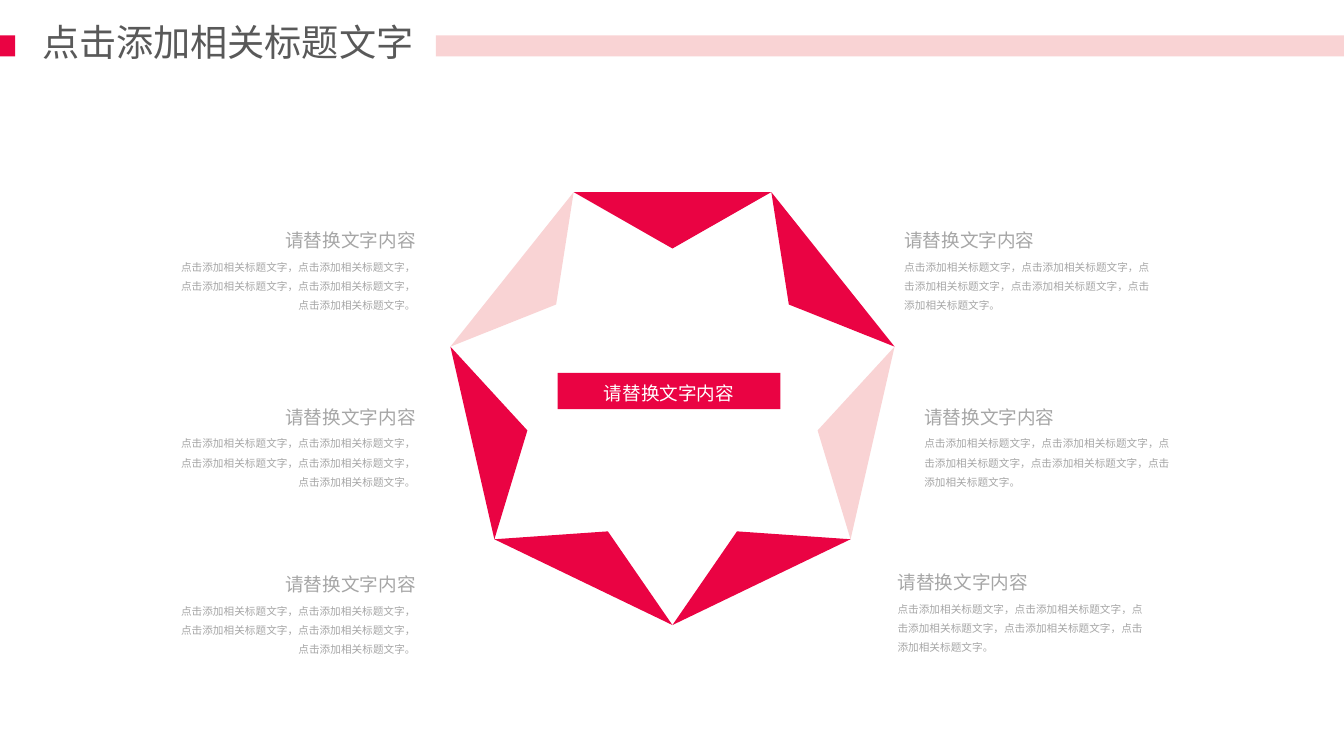
from dataclasses import dataclass
from math import cos, pi, sin

from pptx import Presentation
from pptx.dml.color import RGBColor
from pptx.enum.shapes import MSO_SHAPE as Shape
from pptx.enum.text import MSO_ANCHOR as Anchor, MSO_AUTO_SIZE as AutoSize, PP_ALIGN as Align
from pptx.oxml.ns import qn
from pptx.util import Inches, Pt


@dataclass(frozen=True)
class Theme:
    red: str = "EA0343"
    pink: str = "F9D3D4"
    white: str = "FFFFFF"
    title_grey: str = "595959"
    text_grey: str = "A6A6A6"
    heading_font: str = "Arial"
    body_font: str = "Noto Sans CJK SC"
    title_size: int = 28
    heading_size: int = 14
    body_size: int = 8


@dataclass(frozen=True)
class Box:
    left: float
    top: float
    width: float
    height: float

    def emu(self):
        return [Inches(side) for side in (self.left, self.top, self.width, self.height)]


THEME = Theme()
TITLE = "点击添加相关标题文字"
HEADING = "请替换文字内容"
BODY = "，".join([TITLE] * 5) + "。"
SIDES = 7
PINK_SIDES = (2, 6)


def apply(target, values):
    for name, value in values.items():
        setattr(target, name, value)


def paint(shape, color):
    shape.fill.solid()
    shape.fill.fore_color.rgb = RGBColor.from_string(color)
    shape.line.fill.background()
    shape.shadow.inherit = False


def add_bar(page, box, color):
    bar = page.shapes.add_shape(Shape.RECTANGLE, *box.emu())
    paint(bar, color)
    return bar


def write(frame, text, font, size, color, frame_format, para_format):
    apply(frame, frame_format)
    para = frame.paragraphs[0]
    apply(para, para_format)
    span = para.add_run()
    span.text = text
    apply(span.font, {"name": font, "size": Pt(size)})
    span.font.color.rgb = RGBColor.from_string(color)
    # East Asian typeface
    east_asian = span.font._element.makeelement(qn("a:ea"), {"typeface": THEME.body_font})
    span.font._element.append(east_asian)


def add_header(page, box):
    # Red tab and pink band on either side of the title
    bar_top, bar_height, band_left = box.top + 0.37, 0.22, box.left + 4.56
    add_bar(page, Box(band_left, bar_top, box.width - 4.56, bar_height), THEME.pink)
    add_bar(page, Box(box.left, bar_top, 0.16, bar_height), THEME.red)

    title = page.shapes.title
    place = Box(box.left + 0.34, box.top + 0.18, 4.13, 0.57).emu()
    apply(title, dict(zip(("left", "top", "width", "height"), place)))
    write(title.text_frame, TITLE, THEME.body_font, THEME.title_size, THEME.title_grey,
          {"word_wrap": False, "auto_size": AutoSize.SHAPE_TO_FIT_TEXT,
           "vertical_anchor": Anchor.MIDDLE},
          {"alignment": Align.LEFT, "line_spacing": 0.9})


def add_star_ring(page, box):
    # Each side of a heptagon carries a triangle pointing to the centre
    radius = box.height / (1 + cos(pi / SIDES))
    tip_radius = radius * cos(pi / SIDES) - 0.59
    center_x = box.left + box.width / 2
    center_y = box.top + box.height - radius

    def point(distance, angle):
        return (Inches(center_x + distance * sin(angle)),
                Inches(center_y - distance * cos(angle)))

    for side in range(SIDES):
        angle = 2 * pi * side / SIDES
        start = point(radius, angle - pi / SIDES)
        end = point(radius, angle + pi / SIDES)
        outline = page.shapes.build_freeform(*start)
        outline.add_line_segments([end, point(tip_radius, angle)])
        paint(outline.convert_to_shape(), THEME.pink if side in PINK_SIDES else THEME.red)

    # Central label
    label = add_bar(page, Box(center_x - 1.2, box.top + 1.89, 2.33, 0.38), THEME.red)
    write(label.text_frame, HEADING, THEME.heading_font, THEME.heading_size, THEME.white,
          {"word_wrap": True, "vertical_anchor": Anchor.MIDDLE},
          {"alignment": Align.CENTER, "line_spacing": 1.2, "space_before": Pt(2.8)})


def add_caption(page, box, align):
    heading_box = Box(box.left, box.top, box.width, 0.39)
    body_box = Box(box.left, box.top + 0.31, box.width, box.height - 0.31)
    for part, text, font, size, spacing in (
        (heading_box, HEADING, THEME.heading_font, THEME.heading_size, 1.2),
        (body_box, BODY, THEME.body_font, THEME.body_size, 1.5),
    ):
        frame = page.shapes.add_textbox(*part.emu()).text_frame
        write(frame, text, font, size, THEME.text_grey,
              {"word_wrap": True, "auto_size": AutoSize.SHAPE_TO_FIT_TEXT,
               "margin_left": Inches(0.11), "margin_right": Inches(0.11)},
              {"alignment": align, "line_spacing": spacing})


def build_ring_slide(deck, box):
    page = deck.slides.add_slide(deck.slide_layouts[5])
    add_header(page, box)
    add_star_ring(page, Box(4.71, 2.01, 4.65, 4.53))
    # Captions on both sides follow the ring from top to bottom
    for top in (2.3, 4.15, 5.9):
        add_caption(page, Box(1.68, top, 2.78, 1.02), Align.RIGHT)
    for left, top in ((9.35, 2.3), (9.56, 4.15), (9.28, 5.88)):
        add_caption(page, Box(left, top, 2.83, 1.02), Align.LEFT)


def main():
    deck = Presentation()
    slide_box = Box(0, 0, 14.06, 7.91)
    apply(deck, {"slide_width": Inches(slide_box.width),
                 "slide_height": Inches(slide_box.height)})
    build_ring_slide(deck, slide_box)
    deck.save("out.pptx")


if __name__ == "__main__":
    main()
